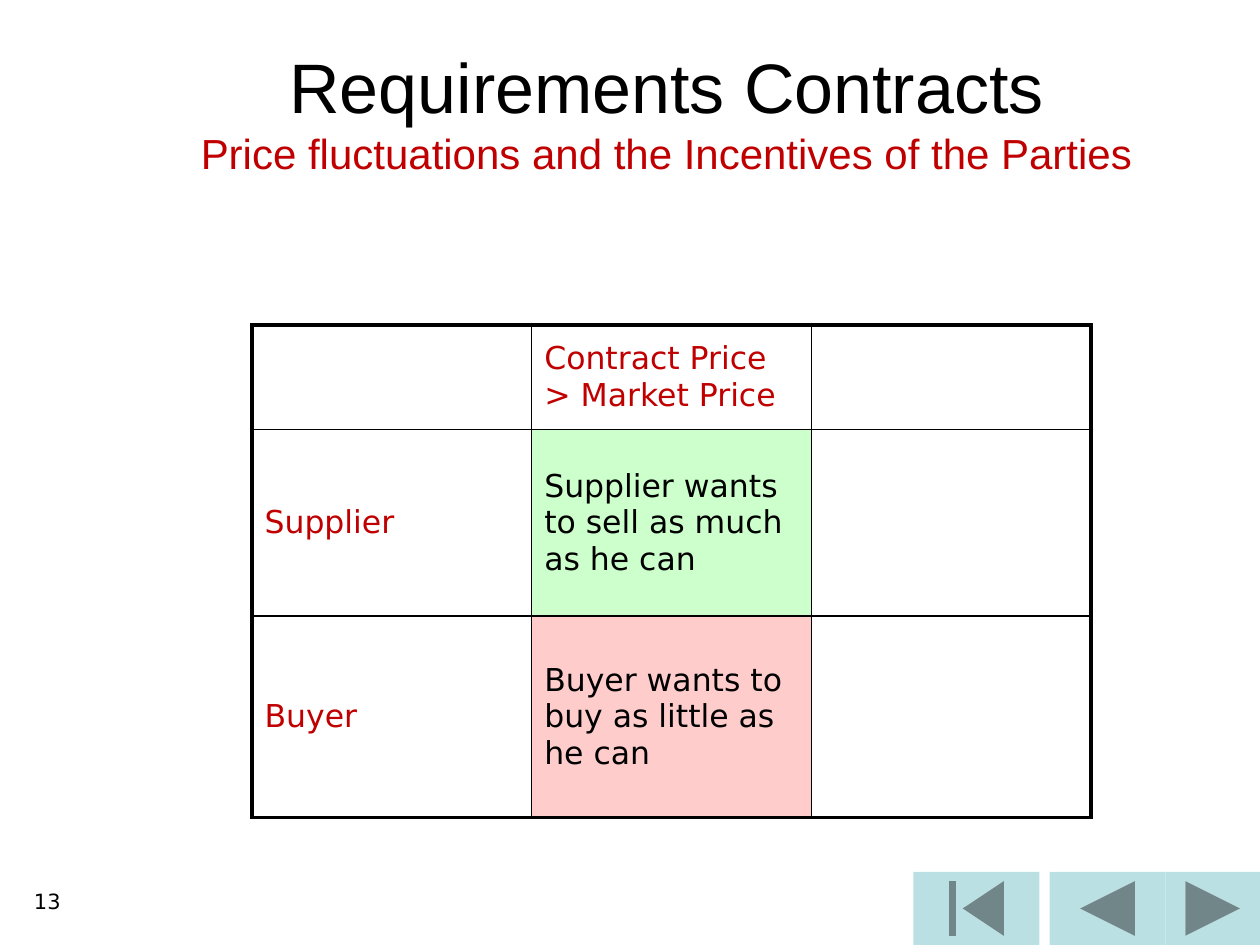
"""Build the slide on requirements contracts and the incentives of the parties."""
from dataclasses import dataclass

from lxml import etree
from pptx import Presentation
from pptx import util as u
from pptx.dml import color
from pptx.enum import shapes, text
from pptx.oxml import ns

BLACK, RED, TEAL = "000000", "C00000", "BBE0E3"
SANS = "DejaVu Sans"
OUTER, INNER = 2.25, 1
COLUMN_WIDTH = 2.22
ROW_HEIGHTS = (0.83, 1.48, 1.6)


@dataclass
class Button:
    kind: shapes.MSO_SHAPE
    left: float
    width: float


@dataclass
class Entry:
    words: str = ""
    ink: str = BLACK
    fill: str = ""


BUTTONS = (
    Button(shapes.MSO_SHAPE.ACTION_BUTTON_BACK_OR_PREVIOUS, 8.33, 0.92),
    Button(shapes.MSO_SHAPE.ACTION_BUTTON_BEGINNING, 7.25, 1),
    Button(shapes.MSO_SHAPE.ACTION_BUTTON_FORWARD_OR_NEXT, 9.25, 0.75),
)
INCENTIVES = (
    (Entry(), Entry("Contract Price > Market Price", RED), Entry()),
    (Entry("Supplier", RED),
     Entry("Supplier wants to sell as much as he can", fill="CCFFCC"), Entry()),
    (Entry("Buyer", RED),
     Entry("Buyer wants to buy as little as he can", fill="FFCCCC"),
     Entry(fill="FFFFFF")),
)


def rgb(value: str) -> color.RGBColor:
    return color.RGBColor.from_string(value)


def add_run(paragraph, words: str, size: float, face: str, ink: str) -> None:
    run = paragraph.add_run()
    run.text = words
    run.font.size = u.Pt(size)
    run.font.name = face
    run.font.color.rgb = rgb(ink)


def add_button(slide, button: Button) -> None:
    shape = slide.shapes.add_shape(
        button.kind, u.Inches(button.left), u.Inches(6.92),
        u.Inches(button.width), u.Inches(0.58))
    shape.shadow.inherit = False
    shape.fill.solid()
    shape.fill.fore_color.rgb = rgb(TEAL)
    shape.line.fill.background()


def add_border(cell, side: str, points: float) -> None:
    properties = cell._tc.get_or_add_tcPr()
    line = etree.SubElement(properties, ns.qn(f"a:ln{side}"), w=str(u.Pt(points)))
    fill = etree.SubElement(line, ns.qn("a:solidFill"))
    etree.SubElement(fill, ns.qn("a:srgbClr"), val=BLACK)


def fill_cell(cell, entry: Entry, row: int, column: int) -> None:
    last_row, last_column = len(INCENTIVES) - 1, len(INCENTIVES[0]) - 1
    edges = {"L": column == 0, "R": column == last_column,
             "T": row == 0, "B": row == last_row}
    for side, is_outer in edges.items():
        add_border(cell, side, OUTER if is_outer else INNER)
    if entry.fill:
        cell.fill.solid()
        cell.fill.fore_color.rgb = rgb(entry.fill)
    else:
        cell.fill.background()
    cell.vertical_anchor = text.MSO_ANCHOR.MIDDLE
    if entry.words:
        paragraph = cell.text_frame.paragraphs[0]
        paragraph.space_before = u.Pt(3.6)
        add_run(paragraph, entry.words, 18, SANS, entry.ink)


def add_incentives(slide) -> None:
    table = slide.shapes.add_table(
        len(INCENTIVES), len(INCENTIVES[0]), u.Inches(2), u.Inches(2.58),
        u.Inches(3 * COLUMN_WIDTH), u.Inches(sum(ROW_HEIGHTS))).table
    table.first_row = table.horz_banding = False
    for column in table.columns:
        column.width = u.Inches(COLUMN_WIDTH)
    for row, entries in enumerate(INCENTIVES):
        table.rows[row].height = u.Inches(ROW_HEIGHTS[row])
        for column, entry in enumerate(entries):
            fill_cell(table.cell(row, column), entry, row, column)


def add_title(slide) -> None:
    title = slide.shapes.title
    title.left, title.top = u.Inches(0.58), u.Inches(0)
    title.width, title.height = u.Inches(9.42), u.Inches(1.75)
    frame = title.text_frame
    frame.auto_size = text.MSO_AUTO_SIZE.NONE
    frame.vertical_anchor = text.MSO_ANCHOR.MIDDLE
    heading = frame.paragraphs[0]
    heading.alignment = text.PP_ALIGN.CENTER
    add_run(heading, "Requirements Contracts", 40, "Arial", BLACK)
    heading.add_line_break()
    add_run(heading, "Price fluctuations and the Incentives of the Parties",
            24, "Arial", RED)


def add_page_number(slide) -> None:
    frame = slide.shapes.add_textbox(
        u.Inches(-1.5), u.Inches(7), u.Inches(2.08), u.Inches(0.5)).text_frame
    frame.word_wrap = True
    number = frame.paragraphs[0]
    number.alignment = text.PP_ALIGN.RIGHT
    add_run(number, "13", 12, SANS, BLACK)


def main() -> None:
    deck = Presentation()
    deck.slide_width, deck.slide_height = u.Inches(10), u.Inches(7.5)
    slide = deck.slides.add_slide(deck.slide_layouts[5])
    for button in BUTTONS:
        add_button(slide, button)
    add_page_number(slide)
    add_title(slide)
    add_incentives(slide)
    deck.save("out.pptx")


if __name__ == "__main__":
    main()
